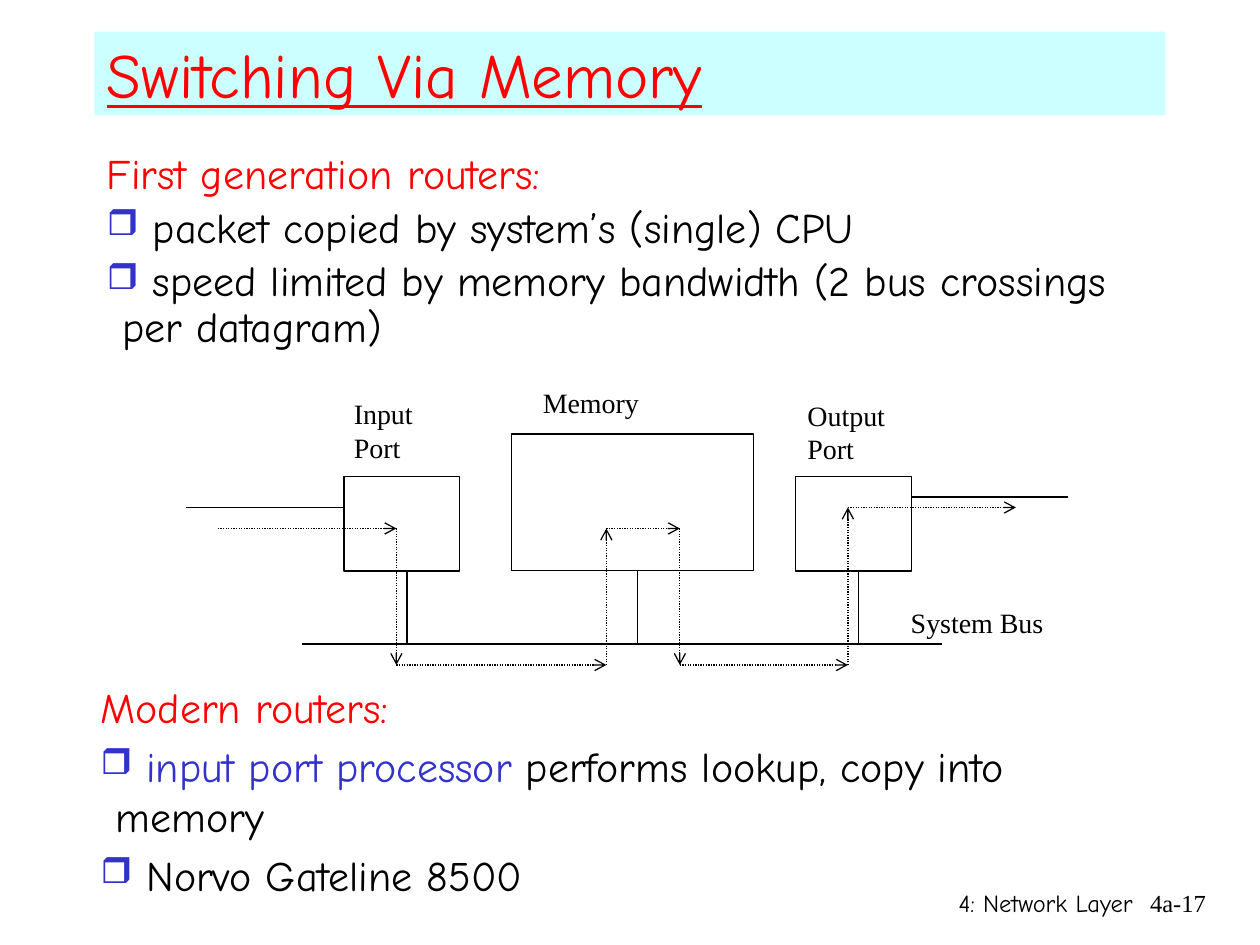
from itertools import pairwise

from lxml import etree
from pptx import Presentation
from pptx.dml.color import RGBColor
from pptx.enum.dml import MSO_LINE
from pptx.enum.shapes import MSO_CONNECTOR, MSO_SHAPE
from pptx.enum.text import MSO_ANCHOR, MSO_AUTO_SIZE, PP_ALIGN
from pptx.oxml.ns import qn
from pptx.util import Pt

RECT = MSO_SHAPE.RECTANGLE
STRAIGHT = MSO_CONNECTOR.STRAIGHT
DOTTED = MSO_LINE.ROUND_DOT
MIDDLE = MSO_ANCHOR.MIDDLE
GROW = MSO_AUTO_SIZE.SHAPE_TO_FIT_TEXT
LEFT, RIGHT = PP_ALIGN.LEFT, PP_ALIGN.RIGHT

BLACK = RGBColor(0x00, 0x00, 0x00)
RED = RGBColor(0xFF, 0x00, 0x00)
BLUE = RGBColor(0x33, 0x33, 0xCC)
CYAN = RGBColor(0xCC, 0xFF, 0xFF)
COMIC, TIMES = "Comic Neue", "Times New Roman"


def add_run(p, text, font, size, color, underline=None):
    r = p.add_run()
    r.text = text
    values = {"name": font, "size": Pt(size), "underline": underline}
    for name, value in values.items():
        setattr(r.font, name, value)
    r.font.color.rgb = color


def add_line(start, end, dotted=False):
    line = s.shapes.add_connector(STRAIGHT, *map(Pt, start + end))
    line.line.color.rgb = BLACK
    line.line.width = Pt(0.75)
    spPr = line._element.spPr
    if dotted:
        line.line.dash_style = DOTTED
        ln = spPr.find(qn("a:ln"))
        etree.SubElement(ln, qn("a:tailEnd"), type="arrow")
    etree.SubElement(spPr, qn("a:effectLst"))


prs = Presentation()
prs.slide_width, prs.slide_height = Pt(720), Pt(540)
s = prs.slides.add_slide(prs.slide_layouts[6])

footers = [
    ("4: Network Layer", COMIC, 426.24, 228.24),
    ("4a-17", TIMES, 642.96, 53.28),
]
for text, font, left, width in footers:
    sp = s.shapes.add_textbox(Pt(left), Pt(504), Pt(width), Pt(36))
    sp.text_frame.word_wrap = True
    p = sp.text_frame.paragraphs[0]
    p.alignment = RIGHT
    add_run(p, text, font, 14, BLACK)

sp = s.shapes.add_shape(RECT, Pt(54), Pt(18), Pt(612), Pt(48))
sp.shadow.inherit = False
sp.fill.solid()
sp.fill.fore_color.rgb = CYAN
sp.line.fill.background()
tf = sp.text_frame
tf.vertical_anchor = MIDDLE
p = tf.paragraphs[0]
p.alignment = LEFT
add_run(p, "Switching Via Memory", COMIC, 36, RED, True)

sections = [
    (54, 84, 0.9, [
        [("First generation routers:", RED)],
        [(" packet copied by system’s (single) CPU", BLACK)],
        [(" speed limited by memory bandwidth (2 bus crossings per datagram)", BLACK)],
    ]),
    (50.4, 386, 1.0, [
        [("Modern routers:", RED)],
        [(" ", BLACK), ("input port processor", BLUE),
         (" performs lookup, copy into memory", BLACK)],
        [(" Norvo Gateline 8500", BLACK)],
    ]),
]
for left, top, spacing, paragraphs in sections:
    sp = s.shapes.add_textbox(Pt(left), Pt(top), Pt(617.76), Pt(84))
    tf = sp.text_frame
    tf.word_wrap = True
    for i, runs in enumerate(paragraphs):
        p = tf.add_paragraph() if i else tf.paragraphs[0]
        p.line_spacing = spacing
        p.space_before = Pt(4.8)
        pPr = p._p.get_or_add_pPr()
        pPr.set("marL", str(Pt(8.64)))
        pPr.set("indent", str(-Pt(8.64)))
        if i:
            color = etree.SubElement(pPr, qn("a:buClr"))
            etree.SubElement(color, qn("a:srgbClr"), val=str(BLUE))
            etree.SubElement(pPr, qn("a:buSzPct"), val="85000")
            etree.SubElement(pPr, qn("a:buChar"), char="❒")
        for text, color in runs:
            add_run(p, text, COMIC, 24, color)

boxes = [
    (196.5, 272.25, 66.25, 54),
    (454.5, 272.25, 66.25, 54),
    (292.5, 248, 138, 78.25),
]
for box in boxes:
    sp = s.shapes.add_shape(RECT, *map(Pt, box))
    sp.shadow.inherit = False
    sp.fill.background()
    sp.line.color.rgb = BLACK
    sp.line.width = Pt(0.75)

bus_y = 368.1
add_line((172.5, bus_y), (538.5, bus_y))
for x in (232.5, 364.5, 490.5):
    add_line((x, 326.25), (x, bus_y))
add_line((196.5, 290.1), (106.5, 290.1))
add_line((610.5, 284), (520.75, 284))

packet_route = [
    (124.5, 302), (226.5, 302), (226.5, 380), (346.5, 380), (346.5, 302),
    (388.5, 302), (388.5, 380), (484.5, 380), (484.5, 290), (580.5, 290),
]
for start, end in pairwise(packet_route):
    add_line(start, end, dotted=True)

labels = [
    (["Input", "Port"], 195.12, 223.2, 48.24, 46.08),
    (["Output", "Port"], 454.32, 224, 59.04, 46.08),
    (["Memory"], 303.12, 216.72, 69.84, 26.64),
    (["System Bus"], 513.36, 342.72, 90.72, 26.64),
]
for lines, *box in labels:
    sp = s.shapes.add_textbox(*map(Pt, box))
    tf = sp.text_frame
    tf.word_wrap = False
    tf.auto_size = GROW
    for i, text in enumerate(lines):
        p = tf.add_paragraph() if i else tf.paragraphs[0]
        add_run(p, text, TIMES, 16, BLACK)

prs.save("out.pptx")
